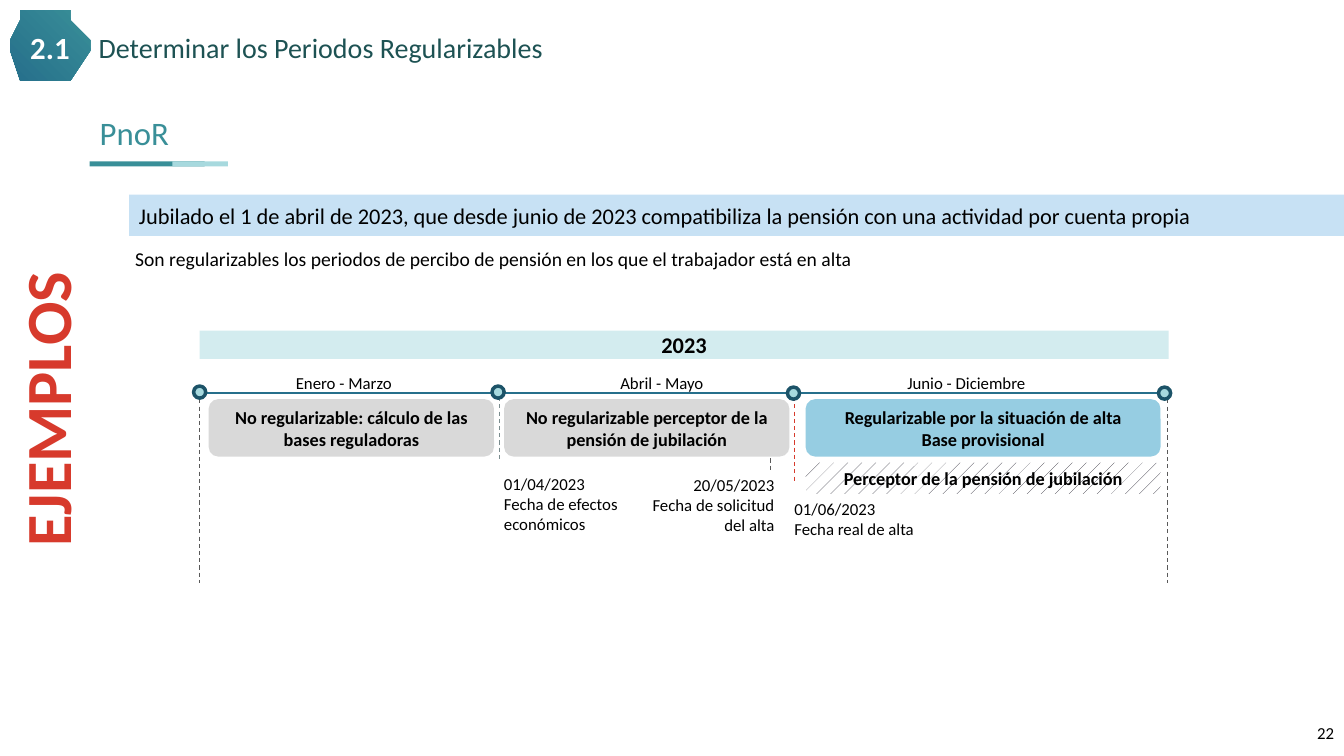
import pptx
import pptx.util
import pptx.dml.color
import pptx.enum.dml
import pptx.enum.shapes
import pptx.enum.text
import lxml.etree

# ---- Content: lengths in grid cells, 133.3 columns by 75 rows ----
COLUMNS, ROWS = 133.3, 75
CELL = pptx.util.Inches(0.1)
COLORS = {
    "black": "000000", "white": "FFFFFF", "title": "1D5253", "teal": "398F98",
    "pale_teal": "A7D9DE", "axis": "266F8B", "ring": "1C5368", "red": "D73A2C",
    "banner": "C7E1F4", "year": "D3ECEF", "gray": "D9D9D9", "blue": "96CDE2",
    "dark_dash": "595959", "gray_dash": "7A8C8E", "hatch": "292834",
}
FONT = "Calibri"
DEFAULT_INSETS = (1, 0.5, 1, 0.5)

# place, lines, size, and options for the text
TEXTS = [
    ((103.3, 70.7, 30, 4), ["22"], 12, {"align": "r", "anchor": "m"}),
    ((8.8, 3, 115.8, 3.9), ["Determinar los Periodos Regularizables"], 20,
     {"color": "title", "spacing": 0.85, "after": 6}),
    ((1.7, 3.5, 6.5, 3), ["2.1"], 22,
     {"color": "white", "bold": True, "align": "c", "anchor": "m",
      "spacing": 0.8, "insets": (1, 0, 1, 0)}),
    ((8.9, 10.3, 68.1, 6.1), ["PnoR"], 23.4,
     {"color": "teal", "anchor": "m", "spacing": 0.9}),
    ((3, 8, 3, 65.2), ["EJEMPLOS"], 46,
     {"color": "red", "bold": True, "align": "c", "anchor": "m", "turn": "vert270"}),
    ((13.4, 24.5, 116.6, 2.4),
     ["Son regularizables los periodos de percibo de pensión en los que el trabajador está en alta"],
     14, {"insets": (0, 0, 0, 0), "after": 6}),
    ((49, 46.5, 19, 5.6), ["01/04/2023", "Fecha de efectos económicos"], 12, {}),
    ((77.8, 49, 19, 5.6), ["01/06/2023", "Fecha real de alta"], 12, {}),
    ((63.2, 46.6, 14.6, 5.6), ["20/05/2023", "Fecha de solicitud del alta"], 12,
     {"align": "r"}),
]
BANNER = "Jubilado el 1 de abril de 2023, que desde junio de 2023 compatibiliza la pensión con una actividad por cuenta propia"
UNDERLINE = [((8.9, 16, 11.4, 0.5), "teal"), ((17.1, 16, 5.5, 0.5), "pale_teal")]

# Timeline: label, label left and width, box left and width, box lines, colour
PERIODS = [
    ("Enero - Marzo", 20.4, 27.4, 20.7, 28.3,
     ["No regularizable: cálculo de las bases reguladoras"], "gray"),
    ("Abril - Mayo", 49.5, 32.3, 50, 28.3,
     ["No regularizable perceptor de la pensión de jubilación"], "gray"),
    ("Junio - Diciembre", 79.7, 32.3, 79.9, 35.2,
     ["Regularizable por la situación de alta", "Base provisional"], "blue"),
]
LABEL_ROW, BOX_ROW, BOX_HEIGHT = 36.5, 39.6, 5.7
AXIS_ROW, AXIS_ENDS = 39, (19.9, 116)
# column, first row, last row, colour
DASHES = [
    (76.4, 41.9, 46.6, "dark_dash"), (78.8, 39.4, 47.7, "red"),
    (49.5, 39.4, 45.7, "gray_dash"), (19.8, 38.9, 57.8, "dark_dash"),
    (115.8, 38.9, 57.8, "dark_dash"),
]
DOTS = [(19.2, 38.3), (48.8, 38.3), (78.1, 38.4), (114.9, 38.4)]
DOT_SIZE = 1.2
HEXAGON = [(0.83, 4.55), (2.5, 1.1), (7.1, 1.1), (8.77, 4.55), (7.1, 8), (2.5, 8)]
CORNER_CUT = 0.45
CORNER_STEPS = 6

ALIGN = {"l": pptx.enum.text.PP_ALIGN.LEFT, "c": pptx.enum.text.PP_ALIGN.CENTER,
         "r": pptx.enum.text.PP_ALIGN.RIGHT}
ANCHOR = {"t": pptx.enum.text.MSO_ANCHOR.TOP, "m": pptx.enum.text.MSO_ANCHOR.MIDDLE}
SHAPE = pptx.enum.shapes.MSO_SHAPE

deck = pptx.Presentation()
deck.slide_width, deck.slide_height = int(COLUMNS * CELL), int(ROWS * CELL)
page = deck.slides.add_slide(deck.slide_layouts[6])


def cells(values):
    return [int(value * CELL) for value in values]


def color(name):
    return pptx.dml.color.RGBColor.from_string(COLORS[name])


def write(shape, lines, size, color_name="black", bold=False, align="l", anchor="t",
          spacing=None, after=0, insets=DEFAULT_INSETS, turn=None):
    frame = shape.text_frame
    frame.word_wrap = True
    frame.vertical_anchor = ANCHOR[anchor]
    (frame.margin_left, frame.margin_top,
     frame.margin_right, frame.margin_bottom) = cells(insets)
    if turn:
        frame._txBody.bodyPr.set("vert", turn)
    for index, line in enumerate(lines):
        para = frame.add_paragraph() if index else frame.paragraphs[0]
        para.text = line
        para.alignment = ALIGN[align]
        para.space_after = pptx.util.Pt(after)
        if spacing:
            para.line_spacing = spacing
        para.font.name, para.font.size = FONT, pptx.util.Pt(size)
        para.font.bold = bold
        para.font.color.rgb = color(color_name)


def add_box(kind, place, fill=None):
    shape = page.shapes.add_shape(kind, *cells(place))
    shape.shadow.inherit = False
    shape.line.fill.background()
    if fill:
        shape.fill.solid()
        shape.fill.fore_color.rgb = color(fill)
    return shape


def add_line(start, end, color_name, width, dashed=False):
    line = page.shapes.add_connector(
        pptx.enum.shapes.MSO_CONNECTOR.STRAIGHT, *cells(start + end))
    line.line.color.rgb = color(color_name)
    line.line.width = pptx.util.Pt(width)
    if dashed:
        line.line.dash_style = pptx.enum.dml.MSO_LINE.DASH
    lxml.etree.SubElement(line._element.spPr, pptx.oxml.ns.qn("a:effectLst"))


def toward(start, end, share):
    return tuple(a + (b - a) * share for a, b in zip(start, end))


def rounded_outline(corners):
    """Replace each corner by points on a quadratic curve."""
    points = []
    for index, corner in enumerate(corners):
        ends = []
        for other in (corners[index - 1], corners[(index + 1) % len(corners)]):
            length = sum((a - b) ** 2 for a, b in zip(corner, other)) ** 0.5
            ends.append(toward(corner, other, CORNER_CUT / length))
        for step in range(CORNER_STEPS + 1):
            share = step / CORNER_STEPS
            points.append(toward(toward(ends[0], corner, share),
                                 toward(corner, ends[1], share), share))
    return points


# ---- Section badge ----
outline = rounded_outline(HEXAGON)
builder = page.shapes.build_freeform(*outline[0], scale=CELL)
builder.add_line_segments(outline[1:], close=True)
badge = builder.convert_to_shape()
badge.shadow.inherit = False
badge.line.fill.background()
badge.fill.gradient()
for stop, name, position in zip(badge.fill.gradient_stops, ("axis", "teal"), (0, 1)):
    stop.color.rgb, stop.position = color(name), position
gradient = badge._element.spPr.find(pptx.oxml.ns.qn("a:gradFill"))
gradient.remove(gradient.find(pptx.oxml.ns.qn("a:lin")))
radial = lxml.etree.SubElement(gradient, pptx.oxml.ns.qn("a:path"), path="circle")
lxml.etree.SubElement(radial, pptx.oxml.ns.qn("a:fillToRect"), t="100000", r="100000")

# ---- Heading underline and banner ----
for place, name in UNDERLINE:
    add_box(SHAPE.RECTANGLE, place, name)
write(add_box(SHAPE.RECTANGLE, (12.8, 19.3, 120.5, 4.1), "banner"), [BANNER], 16, anchor="m")

# ---- Timeline ----
for column, first, last, name in DASHES:
    add_line((column, first), (column, last), name, 0.75, dashed=True)
add_line((AXIS_ENDS[0], AXIS_ROW), (AXIS_ENDS[1], AXIS_ROW), "axis", 1.5)
write(add_box(SHAPE.RECTANGLE, (19.8, 32.8, 96.1, 2.8), "year"), ["2023"], 16,
      bold=True, align="c", anchor="m")
for label, label_left, label_width, left, width, lines, name in PERIODS:
    write(page.shapes.add_textbox(*cells((label_left, LABEL_ROW, label_width, 2.5))),
          [label], 12, align="c")
    write(add_box(SHAPE.ROUNDED_RECTANGLE, (left, BOX_ROW, width, BOX_HEIGHT), name),
          lines, 13, bold=True, align="c", anchor="m")
for left, top in DOTS:
    dot = add_box(SHAPE.OVAL, (left, top, DOT_SIZE, DOT_SIZE), "pale_teal")
    dot.line.color.rgb = color("ring")
    dot.line.width = pptx.util.Pt(2.5)

# ---- Hatched pension bar ----
pension = add_box(SHAPE.ROUNDED_RECTANGLE, (79.9, 45.9, 35.2, 3.1))
pension.fill.patterned()
pension.fill.pattern = pptx.enum.dml.MSO_PATTERN.PERCENT_5
pension.fill.fore_color.rgb = color("hatch")
pension.fill.back_color.rgb = color("white")
write(pension, ["Perceptor de la pensión de jubilación"], 13, bold=True, align="c", anchor="m")

# ---- Free text ----
for place, lines, size, options in TEXTS:
    settings = dict(options)
    write(page.shapes.add_textbox(*cells(place)), lines, size,
          settings.pop("color", "black"), **settings)

deck.save("out.pptx")
